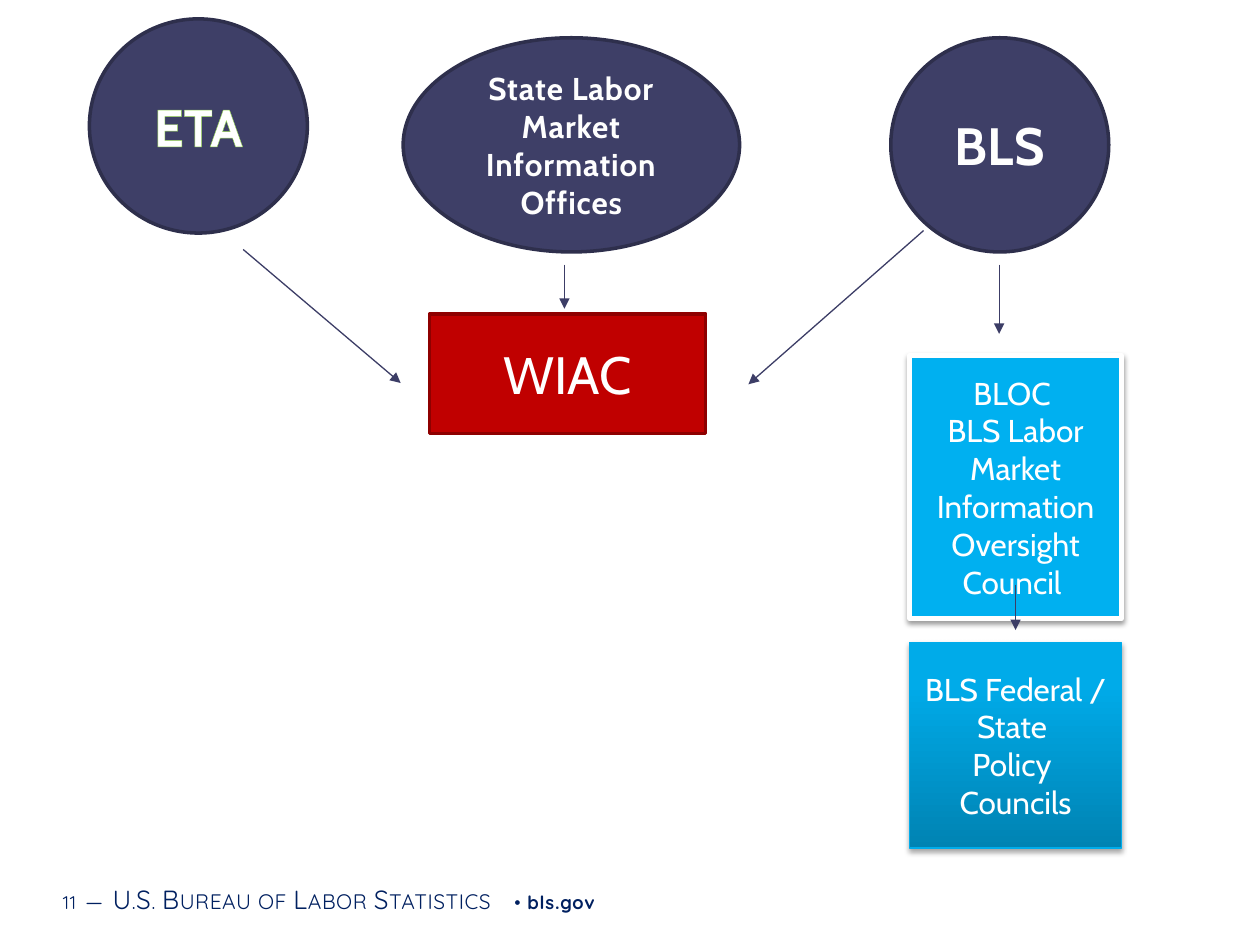
from lxml import etree
from pptx import Presentation
from pptx import util as u
from pptx.dml.color import RGBColor
from pptx.enum import shapes, text
from pptx.oxml import parse_xml
from pptx.oxml.ns import nsdecls, qn

PX = u.Inches(1) // 100
COLORS = {
    "white": "FFFFFF", "soft_white": "FEFEFE", "black": "000000",
    "navy": "3E3F67", "navy_edge": "2E2F4C", "arrow": "3C3D66",
    "red": "C00000", "red_edge": "8E0000", "green": "92D050",
    "sky": "00B0F0", "sky_edge": "00ACEB", "sky_dark": "0083B3",
    "sky_mid": "00ABE9", "sky_top": "00ABEA", "footer": "002060",
}


def rgb(name):
    return RGBColor.from_string(COLORS[name])


def px(*lengths):
    return [length * PX for length in lengths]


def add_run(paragraph, words, size, color, font="Cabin", bold=False,
            spacing=0, outline=None, small_caps=False):
    run = paragraph.add_run()
    run.text = words
    run.font.size = u.Pt(size)
    run.font.name = font
    run.font.bold = bold
    run.font.color.rgb = rgb(color)
    properties = run.font._element
    if spacing:
        properties.set("spc", str(round(spacing * 100)))
    if small_caps:
        properties.set("cap", "small")
    if outline:
        properties.insert(0, parse_xml(
            f'<a:ln {nsdecls("a")} w="{u.Pt(0.75)}"><a:solidFill>'
            f'<a:srgbClr val="{COLORS[outline]}"/></a:solidFill></a:ln>'))


def add_node(slide, kind, box, fill, edge, width, lines, size, **style):
    shape = slide.shapes.add_shape(kind, *px(*box))
    shape.shadow.inherit = False
    shape.fill.solid()
    shape.fill.fore_color.rgb = rgb(fill)
    shape.line.color.rgb = rgb(edge)
    shape.line.width = u.Pt(width)
    frame = shape.text_frame
    frame.word_wrap = True
    frame.vertical_anchor = text.MSO_ANCHOR.MIDDLE
    for index, line in enumerate(lines):
        paragraph = frame.paragraphs[0] if index == 0 else frame.add_paragraph()
        paragraph.alignment = text.PP_ALIGN.CENTER
        for part_index, part in enumerate(line.split("\n")):
            if part_index:
                paragraph.add_line_break()
            add_run(paragraph, part, size, **style)
    return shape


def add_arrow(slide, start, end):
    connector = slide.shapes.add_connector(
        shapes.MSO_CONNECTOR.STRAIGHT, *px(*start, *end))
    connector.line.color.rgb = rgb("arrow")
    connector.line.width = u.Pt(0.75)
    line = connector.line._get_or_add_ln()
    etree.SubElement(line, qn("a:tailEnd"), type="triangle")
    etree.SubElement(connector._element.spPr, qn("a:effectLst"))


def add_shadow(shape, alpha, distance):
    effects = shape._element.spPr.find(qn("a:effectLst"))
    effects.append(parse_xml(
        f'<a:outerShdw {nsdecls("a")} blurRad="{u.Pt(3.1)}" dist="{u.Pt(distance)}"'
        f' dir="5400000" rotWithShape="0"><a:srgbClr val="{COLORS["black"]}">'
        f'<a:alpha val="{alpha * 1000}"/></a:srgbClr></a:outerShdw>'))


def set_gradient(shape, stops):
    items = "".join(
        f'<a:gs pos="{position * 1000}"><a:srgbClr val="{COLORS[color]}"/></a:gs>'
        for position, color in stops)
    properties = shape._element.spPr
    properties.replace(properties.find(qn("a:solidFill")), parse_xml(
        f'<a:gradFill {nsdecls("a")} rotWithShape="1"><a:gsLst>{items}</a:gsLst>'
        '<a:lin ang="16200000" scaled="0"/></a:gradFill>'))


def draw_partners(slide, left, top):
    spaced = dict(color="soft_white", spacing=0.5, outline="navy")
    partners = [
        (636, 15, 173, "BLS", 30, spaced),
        (249, 15, 267, "State Labor Market Information Offices", 18, spaced),
        (0, 0, 173, "ETA", 30, dict(color="white", outline="green")),
    ]
    for x, y, width, name, size, style in partners:
        add_node(slide, shapes.MSO_SHAPE.OVAL, (left + x, top + y, width, 170),
                 "navy", "navy_edge", 2, [name], size, bold=True, **style)


def draw_wiac(slide, left, top):
    add_node(slide, shapes.MSO_SHAPE.RECTANGLE, (left, top, 219, 95),
             "red", "red_edge", 2, ["WIAC"], 30, color="white")
    for start_x, start_y, end_x, end_y in [
            (-148, -51, -23, 55), (107, -39, 107, -4), (392, -66, 253, 56)]:
        add_arrow(slide, (left + start_x, top + start_y), (left + end_x, top + end_y))


def draw_councils(slide, left, top):
    oversight = add_node(
        slide, shapes.MSO_SHAPE.RECTANGLE, (left, top, 168, 209), "sky", "white", 3,
        ["BLOC ", "BLS Labor Market Information", "Oversight Council "],
        18, color="white")
    add_shadow(oversight, 38, 1.6)
    policy = add_node(
        slide, shapes.MSO_SHAPE.RECTANGLE, (left, top + 228, 168, 163),
        "sky", "sky_edge", 0.75,
        ["BLS Federal / State ", "Policy \nCouncils"], 18, color="white")
    set_gradient(policy, [(0, "sky_dark"), (80, "sky_mid"), (100, "sky_top")])
    add_shadow(policy, 35, 1.8)
    add_arrow(slide, (left + 71, top - 72), (left + 71, top - 17))
    add_arrow(slide, (left + 84, top + 182), (left + 84, top + 218))


def draw_footer(slide, left, top, width, height):
    frame = slide.shapes.add_textbox(*px(left, top, width, height)).text_frame
    frame.word_wrap = True
    frame.vertical_anchor = text.MSO_ANCHOR.MIDDLE
    frame.margin_left = frame.margin_right = 7 * PX
    frame.margin_top = frame.margin_bottom = 4 * PX
    caps = dict(spacing=0.3, small_caps=True)
    for words, size, style in [
            ("11", 10.5, dict(spacing=0.5)),
            (" ", 16, dict(spacing=0.5)),
            ("—", 15, caps),
            (" ", 16, dict(spacing=0.5)),
            ("U.S. Bureau of Labor Statistics", 15, caps),
            (" • ", 10.5, dict(spacing=0.5)),
            ("bls.gov", 10.5, dict(spacing=0.5, bold=True))]:
        add_run(frame.paragraphs[0], words, size, "footer", "Quicksand", **style)


def main():
    presentation = Presentation()
    presentation.slide_width, presentation.slide_height = px(1000, 750)
    slide = presentation.slides.add_slide(presentation.slide_layouts[6])
    draw_footer(slide, 43, 693, 633, 40)
    draw_partners(slide, 71, 15)
    draw_wiac(slide, 341, 249)
    draw_councils(slide, 722, 282)
    presentation.save("out.pptx")


if __name__ == "__main__":
    main()
